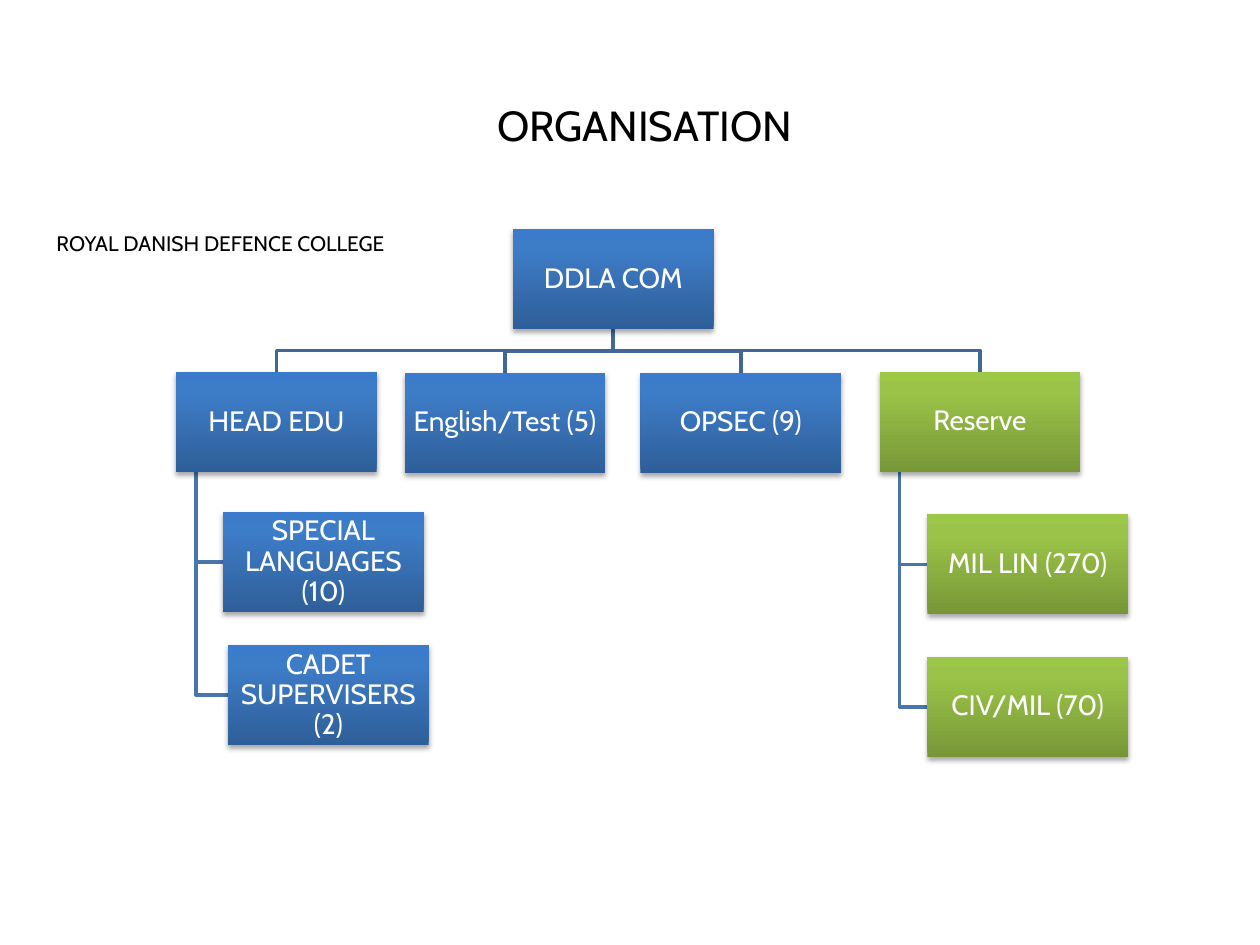
from copy import deepcopy
from dataclasses import dataclass

from lxml.etree import SubElement
from pptx import Presentation
from pptx.dml.color import RGBColor
from pptx.enum.shapes import MSO_SHAPE
from pptx.enum.text import MSO_ANCHOR, PP_ALIGN
from pptx.oxml.ns import qn
from pptx.shapes.autoshape import Shape
from pptx.slide import Slide
from pptx.util import Pt

FONT = "Cabin"
BLACK = RGBColor(0x00, 0x00, 0x00)
WHITE = RGBColor(0xFF, 0xFF, 0xFF)
BRANCH_LINE = RGBColor(0x3F, 0x67, 0x97)
STAFF_LINE = RGBColor(0x48, 0x75, 0xAC)
# Gradient colours run from the bottom of a box to its top
BLUE = (RGBColor(0x2F, 0x5F, 0x99), RGBColor(0x3D, 0x7C, 0xC7), RGBColor(0x3A, 0x7C, 0xCB))
GREEN = (RGBColor(0x77, 0x97, 0x37), RGBColor(0x9B, 0xC3, 0x48), RGBColor(0x9D, 0xC7, 0x46))
STOPS = (0, 0.8, 1)

BOX_WIDTH, BOX_HEIGHT = 114.7, 57.3
STAFF_INDENT = BOX_WIDTH / 10


@dataclass(frozen=True)
class Unit:
    name: str
    left: float
    top: float
    colours: tuple[RGBColor, ...] = BLUE
    staff: tuple["Unit", ...] = ()

    @property
    def center(self) -> float:
        return self.left + BOX_WIDTH / 2

    @property
    def middle(self) -> float:
        return self.top + BOX_HEIGHT / 2

    @property
    def bottom(self) -> float:
        return self.top + BOX_HEIGHT


COMMAND = Unit("DDLA COM", 293.1, 130.8)
BRANCHES = (
    Unit("HEAD EDU", 100.6, 212.6, staff=(
        Unit("SPECIAL LANGUAGES (10)", 127.5, 292.5),
        Unit("CADET SUPERVISERS (2)", 130.3, 368.6),
    )),
    Unit("English/Test (5)", 231.3, 213),
    Unit("OPSEC (9)", 366, 213),
    Unit("Reserve", 502.6, 212.4, GREEN, (
        Unit("MIL LIN (270)", 530, 293.8, GREEN),
        Unit("CIV/MIL (70)", 530, 375.2, GREEN),
    )),
)


def write_text(shape: Shape, text: str, *, size: float, colour: RGBColor = BLACK,
               align: PP_ALIGN = PP_ALIGN.LEFT, anchor: MSO_ANCHOR = MSO_ANCHOR.TOP,
               inset: tuple[float, float] = (7.2, 3.6), line_spacing: float = 1.0) -> None:
    frame = shape.text_frame
    frame.word_wrap = True
    frame.vertical_anchor = anchor
    frame.margin_left = frame.margin_right = Pt(inset[0])
    frame.margin_top = frame.margin_bottom = Pt(inset[1])
    para = frame.paragraphs[0]
    para.alignment = align
    para.line_spacing = line_spacing
    span = para.add_run()
    span.text = text
    span.font.name = FONT
    span.font.size = Pt(size)
    span.font.color.rgb = colour


def fill_gradient(shape: Shape, colours: tuple[RGBColor, ...]) -> None:
    shape.fill.gradient()
    shape.fill.gradient_angle = 90
    stop_list = shape._element.spPr.find(qn("a:gradFill")).find(qn("a:gsLst"))
    stop_list.append(deepcopy(stop_list[-1]))
    for stop, colour, position in zip(shape.fill.gradient_stops, colours, STOPS):
        stop.color.rgb = colour
        stop.position = position


def add_shadow(shape: Shape) -> None:
    shape.shadow.inherit = False
    effects = shape._element.spPr.find(qn("a:effectLst"))
    shadow = SubElement(effects, qn("a:outerShdw"), blurRad=str(Pt(3.1)),
                        dist=str(Pt(1.8)), dir="5400000", rotWithShape="0")
    colour = SubElement(shadow, qn("a:srgbClr"), val=str(BLACK))
    SubElement(colour, qn("a:alpha"), val="35000")


def draw_unit(page: Slide, unit: Unit) -> None:
    box = page.shapes.add_shape(MSO_SHAPE.RECTANGLE, Pt(unit.left), Pt(unit.top),
                                Pt(BOX_WIDTH), Pt(BOX_HEIGHT))
    fill_gradient(box, unit.colours)
    box.line.fill.background()
    add_shadow(box)
    write_text(box, unit.name, size=16, colour=WHITE, align=PP_ALIGN.CENTER,
               anchor=MSO_ANCHOR.MIDDLE, inset=(0.8, 0.8), line_spacing=0.9)


def draw_elbow(page: Slide, points: list[tuple[float, float]], colour: RGBColor) -> None:
    start, *others = [(Pt(x), Pt(y)) for x, y in points]
    builder = page.shapes.build_freeform(*start)
    builder.add_line_segments(others, close=False)
    elbow = builder.convert_to_shape()
    elbow.fill.background()
    elbow.line.color.rgb = colour
    elbow.line.width = Pt(2)
    elbow.shadow.inherit = False


def draw_branch_line(page: Slide, parent: Unit, child: Unit) -> None:
    bend = (parent.bottom + child.top) / 2
    draw_elbow(page, [(parent.center, parent.bottom), (parent.center, bend),
                      (child.center, bend), (child.center, child.top)], BRANCH_LINE)


def draw_staff_line(page: Slide, parent: Unit, child: Unit) -> None:
    trunk = parent.left + STAFF_INDENT
    draw_elbow(page, [(trunk, parent.bottom), (trunk, child.middle),
                      (child.left, child.middle)], STAFF_LINE)


def main() -> None:
    deck = Presentation()
    deck.slide_width, deck.slide_height = Pt(720), Pt(540)
    page = deck.slides.add_slide(deck.slide_layouts[6])

    # College name
    college = page.shapes.add_textbox(Pt(25.2), Pt(128.2), Pt(221), Pt(21.6))
    college.fill.solid()
    college.fill.fore_color.rgb = WHITE
    write_text(college, "ROYAL DANISH DEFENCE COLLEGE", size=12)

    # Lines, behind the boxes
    for branch in BRANCHES:
        draw_branch_line(page, COMMAND, branch)
        for member in branch.staff:
            draw_staff_line(page, branch, member)

    # Boxes
    draw_unit(page, COMMAND)
    for branch in BRANCHES:
        for unit in (branch, *branch.staff):
            draw_unit(page, unit)

    # Title
    title = page.shapes.add_textbox(Pt(161.3), Pt(53.3), Pt(414), Pt(36))
    write_text(title, "ORGANISATION", size=24, align=PP_ALIGN.CENTER)

    deck.save("out.pptx")


if __name__ == "__main__":
    main()
